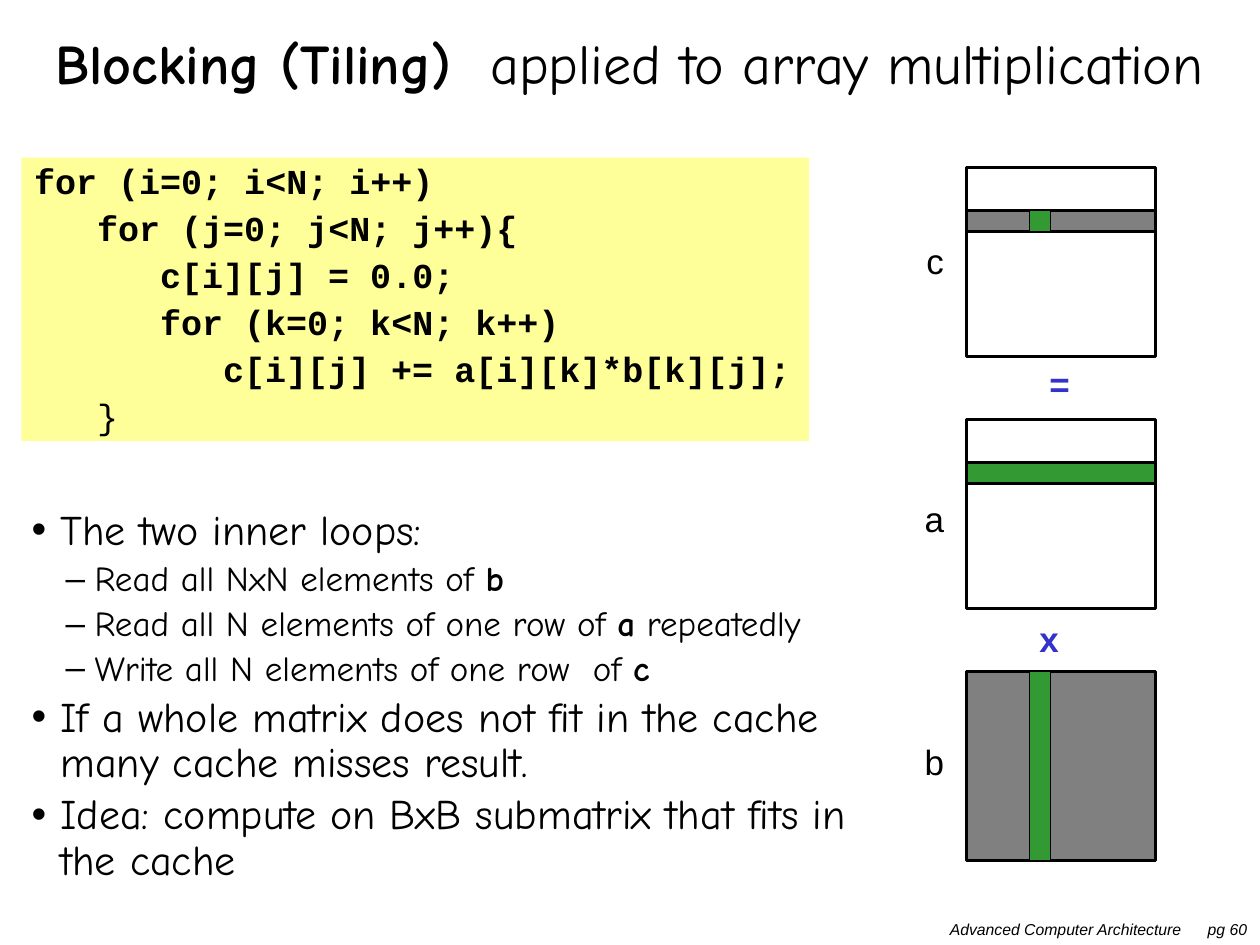
"""Build the slide on blocking applied to array multiplication."""
import pptx
import pptx.util
import pptx.dml.color
import pptx.enum.shapes
import pptx.enum.text
import pptx.oxml
from pptx.util import Inches, Pt

ALIGN = pptx.enum.text.PP_ALIGN
ANCHOR = pptx.enum.text.MSO_ANCHOR
SIZE = pptx.enum.text.MSO_AUTO_SIZE
RECT = pptx.enum.shapes.MSO_SHAPE.RECTANGLE
NS = 'xmlns:a="http://schemas.openxmlformats.org/drawingml/2006/main"'

BLACK, GREY, GREEN, BLUE = "000000", "808080", "339933", "3333CC"
SIDE, BAND = 1.5, 0.17
LEFT, TOPS = 7.67, {"c": 1.33, "a": 3.33, "b": 5.33}

CODE = [
    (0, "for (i=0; i<N; i++)"),
    (1, "for (j=0; j<N; j++){"),
    (2, "c[i][j] = 0.0;"),
    (2, "for (k=0; k<N; k++)"),
    (3, "c[i][j] += a[i][k]*b[k][j];"),
    (1, "}"),
]
POINTS = [
    (0, ["The two inner loops:"]),
    (1, ["Read all NxN elements of ", "b"]),
    (1, ["Read all N elements of one row of ", "a", " repeatedly"]),
    (1, ["Write all N elements of one row  of ", "c"]),
    (0, ["If a whole matrix does not fit in the cache many cache misses result."]),
    (0, ["Idea: compute on BxB submatrix that fits in the cache"]),
]


def tint(color, code):
    """Set a colour from a hex string."""
    color.rgb = pptx.dml.color.RGBColor.from_string(code)


def place(shape, x, y, w, h):
    """Move and size a shape in inches."""
    shape.left, shape.top = Inches(x), Inches(y)
    shape.width, shape.height = Inches(w), Inches(h)


def add_run(para, text, font, size, code=BLACK, bold=False, slant=False):
    """Add one formatted run to a paragraph."""
    run = para.add_run()
    run.text = text
    run.font.name, run.font.size = font, Pt(size)
    run.font.bold, run.font.italic = bold, slant
    tint(run.font.color, code)


def add_xml(para, markup):
    """Append one element to the paragraph properties."""
    para._p.get_or_add_pPr().append(pptx.oxml.parse_xml(markup))


def indent(para, left, first=0):
    """Set the left margin and first line indent in inches."""
    props = para._p.get_or_add_pPr()
    props.set("marL", str(Inches(left)))
    props.set("indent", str(Inches(first)))


def add_paras(frame, count, gap):
    """Return the paragraphs of a frame, spaced alike."""
    frame.auto_size = SIZE.NONE
    frame.vertical_anchor = ANCHOR.TOP
    paras = [frame.paragraphs[0]]
    paras += [frame.add_paragraph() for _ in range(count - 1)]
    for para in paras:
        para.line_spacing, para.space_before = 0.9, Pt(gap)
    return paras


def add_title(shape):
    """Fill the title placeholder."""
    place(shape, 0, -0.08, 10, 1.25)
    frame = shape.text_frame
    frame.auto_size, frame.vertical_anchor = SIZE.NONE, ANCHOR.MIDDLE
    para = frame.paragraphs[0]
    para.alignment, para.line_spacing = ALIGN.CENTER, 0.8
    add_run(para, "Blocking (Tiling) ", "Comic Neue", 32, bold=True)
    add_run(para, " applied to array multiplication", "Comic Neue", 32)


def add_code(shape):
    """Fill the code panel, three characters to a level."""
    place(shape, 0.17, 1.25, 6.25, 2.25)
    shape.fill.solid()
    tint(shape.fill.fore_color, "FFFF99")
    paras = add_paras(shape.text_frame, len(CODE), 5.3)
    for para, (level, text) in zip(paras, CODE):
        indent(para, 0.5 * level)
        add_xml(para, f"<a:buNone {NS}/>")
        add_run(para, text, "Courier New", 20, bold=text != "}")


def add_list(shape):
    """Fill the bullet list, with matrix names in bold."""
    place(shape, 0.15, 3.99, 6.93, 3.4)
    paras = add_paras(shape.text_frame, len(POINTS), 4)
    for para, (level, parts) in zip(paras, POINTS):
        para.level = level
        indent(para, 0.5 if level else 0.23, -0.23)
        add_xml(para, f'<a:buChar {NS} char="{"•–"[level]}"/>')
        for part in parts:
            add_run(para, part, "Comic Neue", 20 if level else 24, bold=part in TOPS)


def add_box(slide, x, y, w, h, fill=None, line=1.5):
    """Draw one outlined rectangle."""
    box = slide.shapes.add_shape(RECT, Inches(x), Inches(y), Inches(w), Inches(h))
    box.shadow.inherit = False
    if fill:
        box.fill.solid()
        tint(box.fill.fore_color, fill)
    else:
        box.fill.background()
    tint(box.line.color, BLACK)
    box.line.width = Pt(line)


def add_label(slide, text, x, y, code=BLACK, bold=False):
    """Add a one-letter label."""
    box = slide.shapes.add_textbox(Inches(x), Inches(y), Inches(0.35), Inches(0.43))
    box.text_frame.word_wrap = False
    para = box.text_frame.paragraphs[0]
    para.alignment = ALIGN.RIGHT
    add_run(para, text, "Arial", 20, code, bold)


def add_foot(slide):
    """Add the footer with the page at a right tab."""
    box = slide.shapes.add_textbox(Inches(7.44), Inches(7.25), Inches(2.56), Inches(0.25))
    box.text_frame.word_wrap = True
    para = box.text_frame.paragraphs[0]
    stop = f'<a:tab pos="{Inches(2.36)}" algn="r"/>'
    add_xml(para, f"<a:tabLst {NS}>{stop}</a:tabLst>")
    add_run(para, "Advanced Computer Architecture\tpg 60", "Arial", 9, slant=True)


def add_grids(slide):
    """Draw the three matrices, their bands and labels."""
    row, col = 0.34, LEFT + 0.5
    for name, top in TOPS.items():
        add_box(slide, LEFT, top, SIDE, SIDE, GREY if name == "b" else None)
    add_box(slide, LEFT, TOPS["c"] + row, SIDE, BAND, GREY)
    add_box(slide, LEFT, TOPS["a"] + row, SIDE, BAND, GREEN)
    add_box(slide, col, TOPS["c"] + row, BAND, BAND, GREEN, 0.75)
    add_box(slide, col, TOPS["b"], BAND, SIDE, GREEN, 0.75)
    for name, y in (("c", 1.85), ("a", 3.9), ("b", 5.83)):
        add_label(slide, name, 7.24, y)
    add_label(slide, "=", 8.23, 2.83, BLUE, True)
    add_label(slide, "x", 8.15, 4.85, BLUE, True)


def main():
    """Build and save the slide."""
    deck = pptx.Presentation()
    deck.slide_width, deck.slide_height = Inches(10), Inches(7.5)
    slide = deck.slides.add_slide(deck.slide_layouts[3])
    title, code, points = slide.placeholders
    add_title(title)
    add_code(code)
    add_list(points)
    add_grids(slide)
    add_foot(slide)
    deck.save("out.pptx")


if __name__ == "__main__":
    main()
